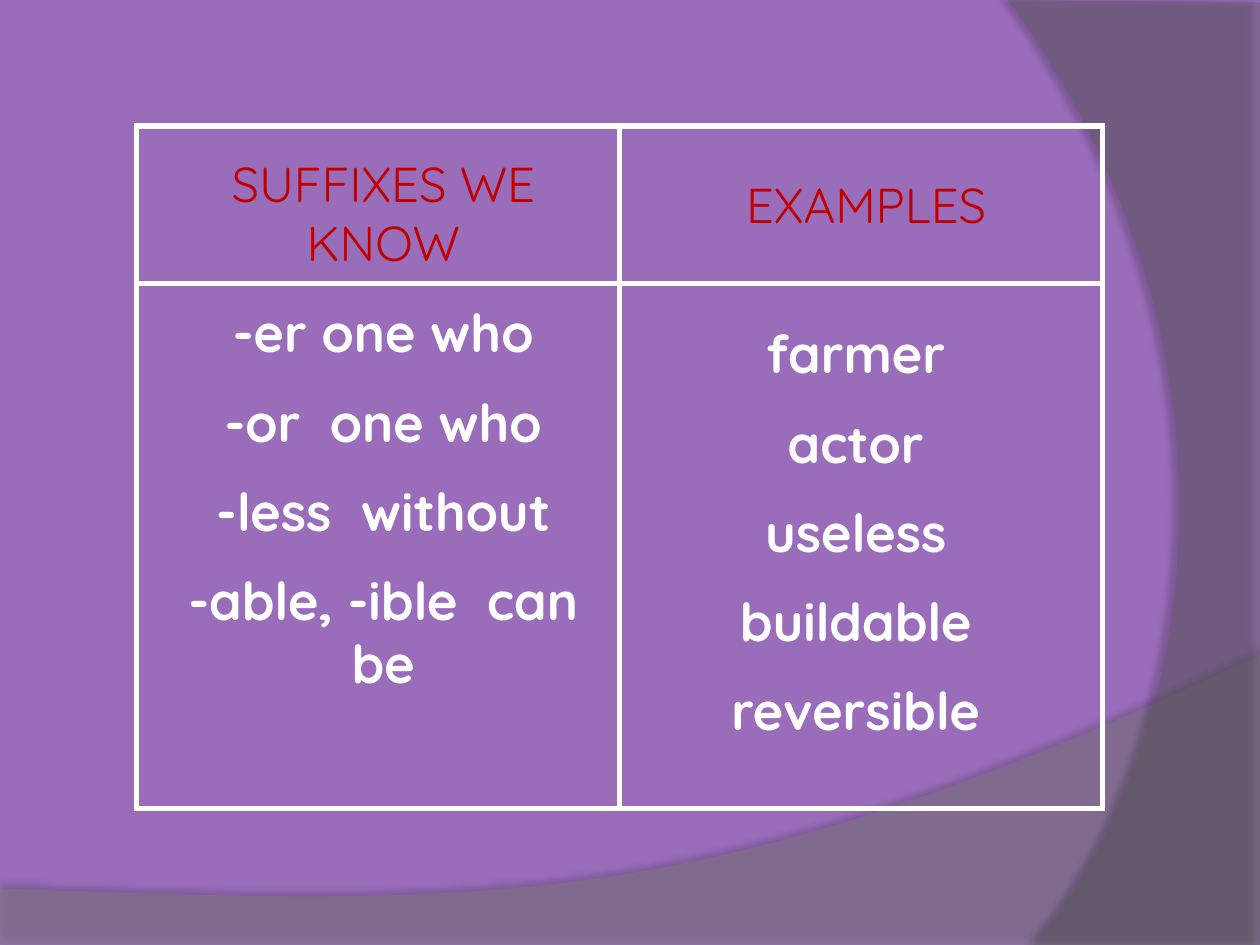
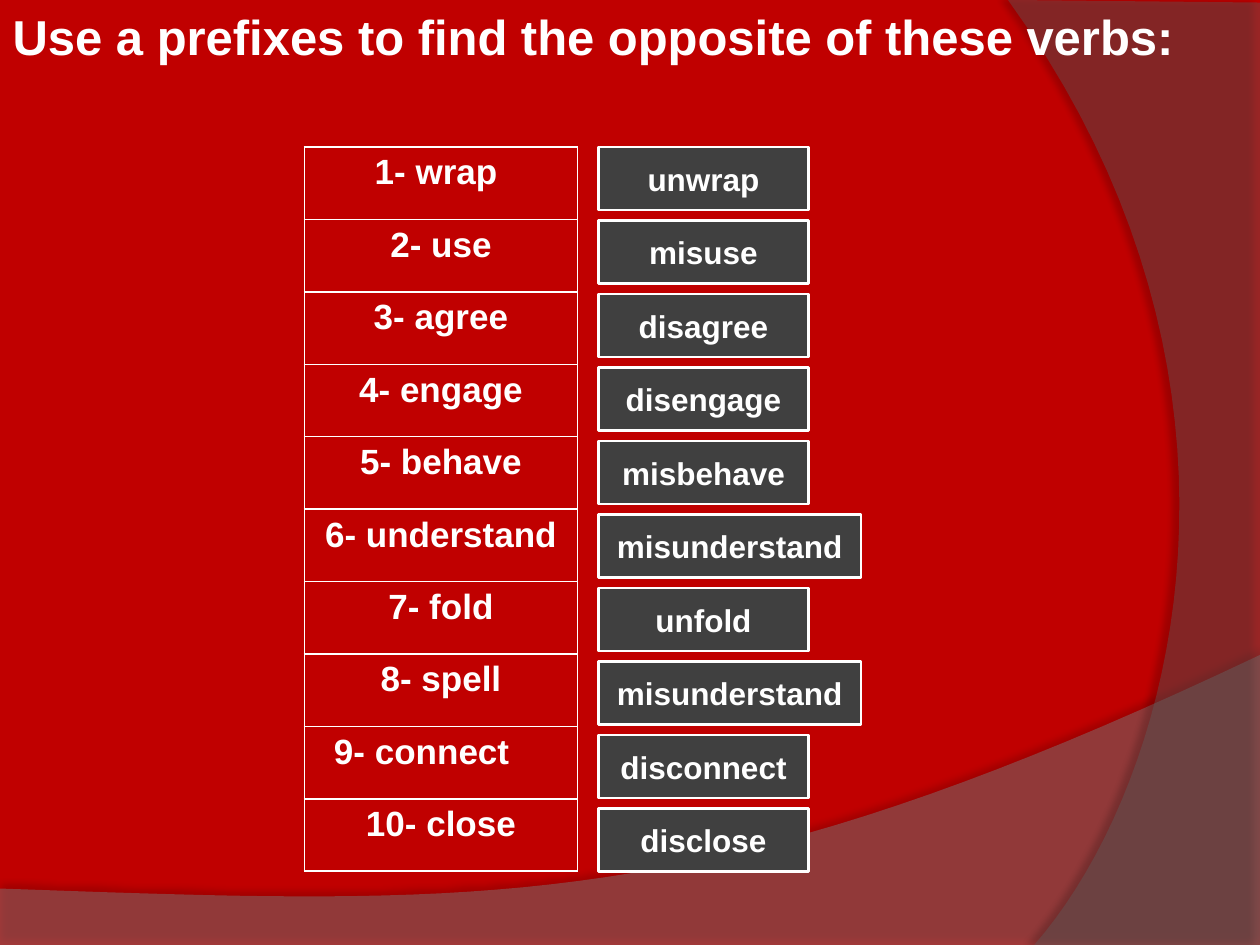
import pptx
import pptx.util
import pptx.dml.color
import pptx.enum.shapes
import pptx.enum.text
import lxml.etree

PX = 9525
WHITE = "FFFFFF"
RED = "C00000"
A = "{http://schemas.openxmlformats.org/drawingml/2006/main}"
RECT = pptx.enum.shapes.MSO_SHAPE.RECTANGLE
ALIGN = pptx.enum.text.PP_ALIGN
ANCHOR = pptx.enum.text.MSO_ANCHOR


def paint(fill, shade):
    fill.solid()
    fill.fore_color.rgb = pptx.dml.color.RGBColor.from_string(shade)


def write(frame, text, size=18, font="Arial", shade=WHITE, bold=True,
          align=ALIGN.CENTER, anchor=ANCHOR.TOP, gap=0):
    frame.word_wrap = True
    frame.auto_size = pptx.enum.text.MSO_AUTO_SIZE.NONE
    frame.vertical_anchor = anchor
    frame.text = text
    for n, para in enumerate(frame.paragraphs):
        para.alignment = align
        para.space_before = pptx.util.Pt(gap if n else 0)
        props = para._p.get_or_add_pPr()
        props.set("marL", "0")
        props.set("indent", "0")
        lxml.etree.SubElement(props, A + "buNone")
        for run in para.runs:
            run.font.size = pptx.util.Pt(size)
            run.font.name = font
            run.font.bold = bold
            paint(run.font.fill, shade)


deck = pptx.Presentation()
deck.slide_width = 960 * PX
deck.slide_height = 720 * PX
words = deck.slides.add_slide(deck.slide_layouts[4])
verbs = deck.slides.add_slide(deck.slide_layouts[5])
paint(words.background.fill, "9A6DBB")
paint(verbs.background.fill, RED)

wave = [(0, 677), (0, 720), (960, 720)], [(960, 499), (537, 700), (375, 690), (0, 677)]
moon = [(960, 2), (960, 720)], [(788, 720), (898, 594), (977, 288), (768, 0)]
bands = [
    (wave, "7F7F7F", 45, 35, 3.5, 270),
    (moon, "5E5E5E", 40, 45, 4, 180),
]
tree = deck.slide_master.shapes.element
for n, ((edge, bend), shade, alpha, dark, dist, turn) in enumerate(bands):
    dots = list(edge)
    for step in range(41):
        t = step / 40
        parts = (1 - t) ** 3, 3 * t * (1 - t) ** 2, 3 * t * t * (1 - t), t ** 3
        dots.append(tuple(sum(k * dot[axis] for k, dot in zip(parts, bend)) for axis in (0, 1)))
    dots = [(round(x * PX), round(y * PX)) for x, y in dots]
    form = words.shapes.build_freeform(*dots[0])
    form.add_line_segments(dots[1:], close=True)
    band = form.convert_to_shape()
    paint(band.fill, shade)
    band.line.fill.background()
    tint = band.element.xpath("./p:spPr/a:solidFill/a:srgbClr")[0]
    lxml.etree.SubElement(tint, A + "alpha", val=str(alpha * 1000))
    band.shadow.inherit = False
    glow = band.element.xpath("./p:spPr/a:effectLst")[0]
    cast = lxml.etree.SubElement(
        glow, A + "outerShdw", blurRad="50800", dist=str(pptx.util.Pt(dist)),
        dir=str(turn * 60000), algn="ctr", rotWithShape="0")
    ink = lxml.etree.SubElement(cast, A + "srgbClr", val="000000")
    lxml.etree.SubElement(ink, A + "alpha", val=str(dark * 1000))
    band.element.xpath("./p:nvSpPr/p:cNvPr")[0].set("id", str(100 + n))
    tree.insert(2 + n, band.element)

for top, high in ((96, 120), (216, 400)):
    for left in (104, 472):
        box = words.shapes.add_shape(RECT, left * PX, top * PX, 368 * PX, high * PX)
        box.shadow.inherit = False
        box.fill.background()
        paint(box.line.fill, WHITE)
        box.line.width = pptx.util.Pt(3)
        edge = box.element.xpath("./p:spPr/a:ln")[0]
        lxml.etree.SubElement(edge, A + "miter", lim="800000")

head = dict(size=28, font="Quicksand", shade=RED, bold=False)
body = dict(size=30, font="Quicksand", gap=15)
texts = [
    (1, 128, 112, 99, "SUFFIXES WE KNOW", head),
    (3, 496, 128, 55, "EXAMPLES", head),
    (2, 128, 224, 468, "-er one who\n-or  one who\n-less  without\n-able, -ible  can be", body),
    (4, 488, 240, 349, "farmer\nactor\nuseless\nbuildable\nreversible", body),
]
slots = {slot.placeholder_format.idx: slot for slot in words.placeholders}
for key, left, top, high, text, style in texts:
    slot = slots[key]
    slot.left, slot.top, slot.width, slot.height = left * PX, top * PX, 328 * PX, high * PX
    write(slot.text_frame, text, **style)
words.shapes.element.remove(words.shapes.title.element)

title = verbs.shapes.title
title.left, title.top, title.width, title.height = 0, 0, 960 * PX, 55 * PX
write(title.text_frame, "Use a prefixes to find the opposite of these verbs:",
      size=28, align=ALIGN.LEFT)

pairs = [
    ("wrap ", "unwrap"), ("use", "misuse"), ("agree", "disagree"),
    ("engage", "disengage"), ("behave", "misbehave"),
    ("understand", "misunderstand"), ("fold", "unfold"),
    ("spell", "misunderstand"), ("connect", "disconnect"), ("close", "disclose"),
]
grid = verbs.shapes.add_table(len(pairs), 1, 232 * PX, 112 * PX, 208 * PX, 552 * PX).table
grid.first_row = False
grid.horz_banding = False
for n, (verb, answer) in enumerate(pairs):
    cell = grid.cell(n, 0)
    write(cell.text_frame, f"{n + 1}- {verb}", size=20)
    if verb == "connect":
        cell.margin_right = 39 * PX
    cell.fill.background()
    props = cell._tc.get_or_add_tcPr()
    for spot, side in enumerate(("lnL", "lnR", "lnT", "lnB")):
        rule = lxml.etree.Element(A + side, w=str(pptx.util.Pt(1)))
        solid = lxml.etree.SubElement(rule, A + "solidFill")
        lxml.etree.SubElement(solid, A + "srgbClr", val=WHITE)
        props.insert(spot, rule)

    wide = 200 if len(answer) > 10 else 160
    card = verbs.shapes.add_shape(RECT, 456 * PX, (112 + 56 * n) * PX, wide * PX, 48 * PX)
    card.shadow.inherit = False
    paint(card.fill, "404040")
    paint(card.line.fill, WHITE)
    card.line.width = pptx.util.Pt(1.5)
    write(card.text_frame, answer, anchor=ANCHOR.MIDDLE)

deck.save("out.pptx")
